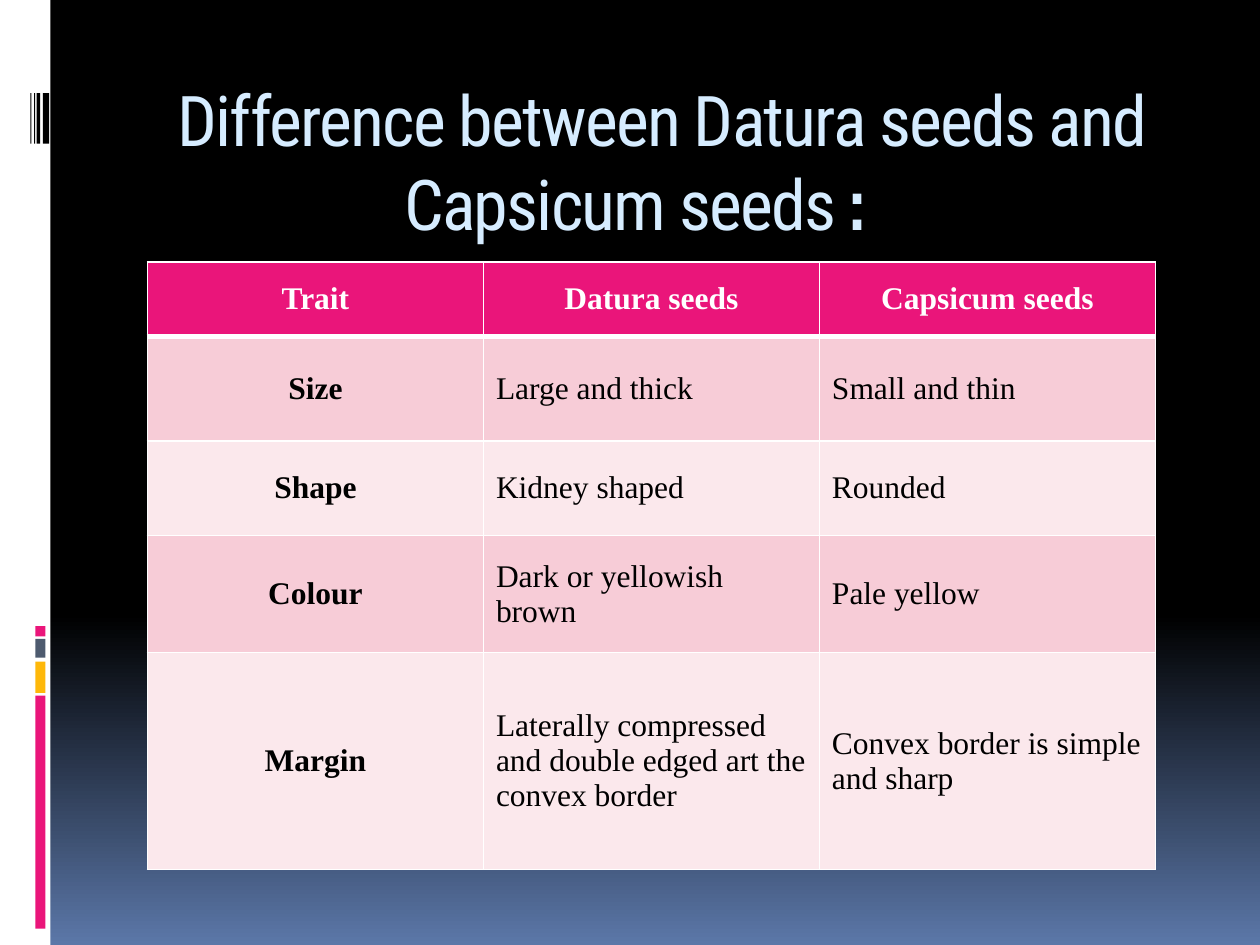
"""Build a slide comparing Datura seeds with Capsicum seeds."""
from dataclasses import dataclass

import lxml.etree
import pptx
import pptx.dml.color
import pptx.enum.shapes
import pptx.enum.text
import pptx.oxml.ns
import pptx.util

Inches, Pt = pptx.util.Inches, pptx.util.Pt
RGB = pptx.dml.color.RGBColor.from_string
ALIGN = pptx.enum.text.PP_ALIGN
MIDDLE = pptx.enum.text.MSO_ANCHOR.MIDDLE
RECT = pptx.enum.shapes.MSO_SHAPE.RECTANGLE
qn = pptx.oxml.ns.qn


@dataclass(frozen=True)
class Theme:
    white: str = "FFFFFF"
    black: str = "000000"
    pink: str = "EA157A"
    amber: str = "FEB80A"
    slate: str = "4E5B6F"
    sky: str = "5B77A8"
    title: str = "D6ECFF"
    bands: tuple[str, str] = ("F7CCD7", "FBE8EC")
    title_font: str = "Roboto Condensed"
    colon_font: str = "DejaVu Sans Mono"
    table_font: str = "Times New Roman"
    title_size: int = 40
    table_size: int = 18


@dataclass(frozen=True)
class Bar:
    left: float
    top: float
    width: float
    height: float
    color: str


THEME = Theme()
BARS = [
    Bar(0, 0, 0.4, 7.5, THEME.white),
    Bar(0.28, 5.52, 0.08, 1.85, THEME.pink),
    Bar(0.28, 5.25, 0.08, 0.25, THEME.amber),
    Bar(0.28, 5.07, 0.08, 0.15, THEME.slate),
    Bar(0.28, 4.97, 0.08, 0.08, THEME.pink),
    *(Bar(left, 0.74, width, 0.4, THEME.black)
      for left, width in ((0.34, 0.05), (0.29, 0.03), (0.27, 0.01), (0.24, 0.01))),
]
ROWS = [
    ("Trait", "Datura seeds", "Capsicum seeds"),
    ("Size", "Large and thick", "Small and thin"),
    ("Shape", "Kidney shaped", "Rounded"),
    ("Colour", "Dark or yellowish brown", "Pale yellow"),
    ("Margin", "Laterally compressed and double edged art the convex border",
     "Convex border is simple and sharp"),
]
ROW_HEIGHTS = (0.59, 0.83, 0.75, 0.93, 1.72)


def add_text(p, text: str, *, font: str, size: int, color: str,
             bold: bool = False, align=ALIGN.LEFT, spacing: int = 0) -> None:
    p.alignment = align
    r = p.add_run()
    r.text = text
    r.font.name, r.font.size, r.font.bold = font, Pt(size), bold
    r.font.color.rgb = RGB(color)
    if spacing:
        r.font._element.set("spc", str(spacing * 100))


def add_background(s) -> None:
    fill = s.background.fill
    fill.gradient()
    fill.gradient_angle = 270
    for stop, position, color in zip(fill.gradient_stops, (0.65, 1), (THEME.black, THEME.sky)):
        stop.position = position
        stop.color.rgb = RGB(color)


def add_bar(s, bar: Bar) -> None:
    sp = s.shapes.add_shape(RECT, Inches(bar.left), Inches(bar.top),
                            Inches(bar.width), Inches(bar.height))
    sp.shadow.inherit = False
    sp.fill.solid()
    sp.fill.fore_color.rgb = RGB(bar.color)
    sp.line.fill.background()


def add_title(s) -> None:
    sp = s.shapes.add_textbox(Inches(1), Inches(0.56), Inches(8.5), Inches(1))
    tf = sp.text_frame
    tf.word_wrap = True
    for text, font in (("Difference between Datura seeds and Capsicum seeds", THEME.title_font),
                       (": ", THEME.colon_font)):
        add_text(tf.paragraphs[0], text, font=font, size=THEME.title_size,
                 color=THEME.title, align=ALIGN.CENTER, spacing=-1)


def set_borders(cell, **widths: int) -> None:
    tc_pr = cell._tc.get_or_add_tcPr()
    for side, width in widths.items():
        ln = lxml.etree.SubElement(tc_pr, qn(f"a:ln{side}"), w=str(Pt(width)))
        fill = lxml.etree.SubElement(ln, qn("a:solidFill"))
        lxml.etree.SubElement(fill, qn("a:srgbClr"), val=THEME.white)


def add_seed_table(s) -> None:
    table = s.shapes.add_table(len(ROWS), len(ROWS[0]), Inches(1.17), Inches(2.08),
                               Inches(8), Inches(sum(ROW_HEIGHTS))).table
    for i, (row, height) in enumerate(zip(ROWS, ROW_HEIGHTS)):
        table.rows[i].height = Inches(height)
        header = i == 0
        for j, text in enumerate(row):
            cell = table.cell(i, j)
            cell.vertical_anchor = MIDDLE
            set_borders(cell, L=1, R=1, T=3 if i == 1 else 1, B=3 if header else 1)
            cell.fill.solid()
            cell.fill.fore_color.rgb = RGB(THEME.pink if header else THEME.bands[(i - 1) % 2])
            label = header or j == 0
            add_text(cell.text_frame.paragraphs[0], text, font=THEME.table_font,
                     size=THEME.table_size, color=THEME.white if header else THEME.black,
                     bold=label, align=ALIGN.CENTER if label else ALIGN.LEFT)


def main() -> None:
    prs = pptx.Presentation()
    prs.slide_width, prs.slide_height = Inches(10), Inches(7.5)
    s = prs.slides.add_slide(prs.slide_layouts[6])
    add_background(s)
    for bar in BARS:
        add_bar(s, bar)
    add_title(s)
    add_seed_table(s)
    prs.save("out.pptx")


if __name__ == "__main__":
    main()
